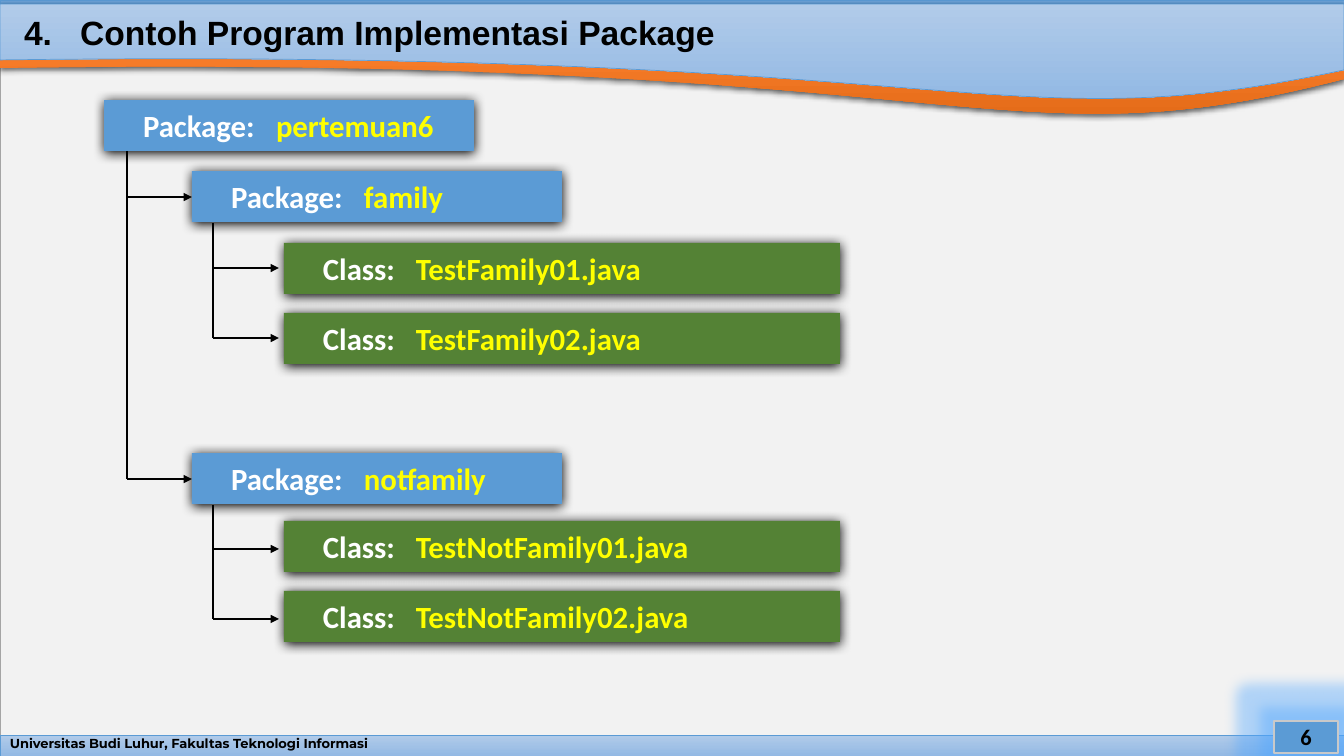
from lxml import etree
from pptx import Presentation
from pptx.dml.color import RGBColor
from pptx.enum.shapes import MSO_CONNECTOR, MSO_SHAPE
from pptx.enum.text import MSO_ANCHOR, MSO_AUTO_SIZE, PP_ALIGN
from pptx.oxml import parse_xml
from pptx.oxml.ns import nsdecls, qn
from pptx.util import Pt

EMU_PER_PX = 12192000 / 1344
BLUE, GREEN, BLACK, YELLOW = "5B9BD5", "548235", "000000", "FFFF00"
PALE_BLUES = ["B1CBE9", "93B9E4"]


def px(*lengths):
    """Turn px lengths into EMU."""
    return [round(length * EMU_PER_PX) for length in lengths]


def paint(shape, colours, line=None, line_width=0.5, effect=None):
    """Fill with one colour or a top-down gradient, set the outline and add an effect."""
    if len(colours) == 1:
        shape.fill.solid()
        shape.fill.fore_color.rgb = RGBColor.from_string(colours[0])
    else:
        shape.fill.gradient()
        shape.fill.gradient_angle = 270
        for stop, colour in zip(shape.fill.gradient_stops, colours):
            stop.color.rgb = RGBColor.from_string(colour)
    if line:
        shape.line.color.rgb = RGBColor.from_string(line)
        shape.line.width = Pt(line_width)
    else:
        shape.line.fill.background()
    shape.shadow.inherit = False
    if effect:
        tag, attributes, colour, alpha = effect
        shape.element.spPr.find(qn("a:effectLst")).append(parse_xml(
            f'<a:{tag} {nsdecls("a")} {attributes}><a:srgbClr val="{colour}">'
            f'<a:alpha val="{alpha}000"/></a:srgbClr></a:{tag}>'))


presentation = Presentation()
presentation.slide_width, presentation.slide_height = px(1344, 756)
slide = presentation.slides.add_slide(presentation.slide_layouts[5])
shapes = slide.shapes

# Backdrop and bands
for top, height, colours, line in [
    (4, 752, ["F2F2F2"], "A5A5A5"),
    (735, 21, PALE_BLUES, BLUE),
    (0, 11, ["71A6DB", "448ACA"], BLUE),
]:
    band = shapes.add_shape(MSO_SHAPE.RECTANGLE, *px(0, top, 1344, height))
    paint(band, colours, line)

# Header waves: each lower edge is a cubic curve
WAVE_SHADOW = ("outerShdw", 'blurRad="57150" dist="19050" dir="5400000" rotWithShape="0"', BLACK, 63)
for curve, colours, first_stop, line, effect in [
    ([(0, 68), (984, 53), (994, 169), (1344, 79)], ["F67B28", "E56C19"], 0.5, None, WAVE_SHADOW),
    ([(0, 60), (984, 47), (994, 145), (1344, 70)], PALE_BLUES, 0, BLUE, None),
]:
    points = []
    for step in range(61):
        t = step / 60
        weights = [(1 - t) ** 3, 3 * t * (1 - t) ** 2, 3 * t ** 2 * (1 - t), t ** 3]
        points.append(px(*(sum(w * point[axis] for w, point in zip(weights, curve))
                           for axis in (0, 1))))
    builder = shapes.build_freeform(*px(0, 4))
    builder.add_line_segments(points + [px(1344, 4)], close=True)
    wave = builder.convert_to_shape()
    paint(wave, colours, line, effect=effect)
    wave.fill.gradient_stops[0].position = first_stop

# Title, footer and page number
title = shapes.title
title.element.getparent().append(title.element)
title.left, title.top, title.width, title.height = px(14, 12, 1308, 46)
footer = shapes.add_textbox(*px(0, 735, 1344, 21))
page_number = shapes.add_shape(MSO_SHAPE.RECTANGLE, *px(1274, 721, 64, 32))
paint(page_number, [BLUE], "C9C9C9", 1.5, ("glow", 'rad="228600"', "4FA6FF", 40))

labels = [
    (title, [("4.\tContoh Program Implementasi Package", BLACK)], "Arial", 24, PP_ALIGN.LEFT, 0.9, 56),
    (footer, [("Universitas Budi Luhur, Fakultas Teknologi Informasi", BLACK)],
     "Montserrat", 9.3, PP_ALIGN.LEFT, 0.7, None),
    (page_number, [("6", BLACK)], "Calibri", 16, PP_ALIGN.CENTER, 1, None),
]

# Package tree boxes
BOX_SHADOW = ("outerShdw", 'blurRad="107950" dist="12700" dir="5400000" rotWithShape="0"', BLACK, 100)
KINDS = {"Package:": (370, BLUE, 133), "Class:": (556, GREEN, 93)}
for left, top, kind, name in [
    (104, 100, "Package:", "pertemuan6"),
    (192, 171, "Package:", "family"),
    (192, 453, "Package:", "notfamily"),
    (284, 243, "Class:", "TestFamily01.java"),
    (284, 313, "Class:", "TestFamily02.java"),
    (284, 521, "Class:", "TestNotFamily01.java"),
    (284, 591, "Class:", "TestNotFamily02.java"),
]:
    width, colour, tab = KINDS[kind]
    box = shapes.add_shape(MSO_SHAPE.RECTANGLE, *px(left, top, width, 51))
    paint(box, [colour], effect=BOX_SHADOW)
    box.text_frame.margin_left = px(39)[0]
    labels.append((box, [(kind + "\t", "FFFFFF"), (name, YELLOW)],
                   "Calibri", 22, PP_ALIGN.LEFT, 1, tab))

for shape, texts, font_name, size, alignment, spacing, tab in labels:
    frame = shape.text_frame
    frame.word_wrap = True
    frame.auto_size = MSO_AUTO_SIZE.NONE
    frame.vertical_anchor = MSO_ANCHOR.MIDDLE
    paragraph = frame.paragraphs[0]
    paragraph.alignment = alignment
    paragraph.line_spacing = spacing
    if tab:
        tab_list = etree.SubElement(paragraph._p.get_or_add_pPr(), qn("a:tabLst"))
        etree.SubElement(tab_list, qn("a:tab"), pos=str(px(tab)[0]), algn="l")
    for text, colour in texts:
        run = paragraph.add_run()
        run.text = text
        run.font.name = font_name
        run.font.size = Pt(size)
        run.font.bold = True
        run.font.color.rgb = RGBColor.from_string(colour)

# Trunks and branch arrows
lines = []
for trunk, top, branches, arrow_end in [
    (127, 151, (197, 479), 192),
    (213, 223, (268, 338), 279),
    (213, 505, (549, 619), 279),
]:
    lines.append((trunk, top, trunk, branches[-1], False))
    lines += [(trunk, y, arrow_end, y, True) for y in branches]
for *ends, has_arrow in lines:
    connector = shapes.add_connector(MSO_CONNECTOR.STRAIGHT, *px(*ends))
    connector.line.color.rgb = RGBColor.from_string(BLACK)
    connector.line.width = Pt(2)
    if has_arrow:
        etree.SubElement(connector.line._get_or_add_ln(), qn("a:tailEnd"), type="triangle")
    etree.SubElement(connector._element.spPr, qn("a:effectLst"))

presentation.save("out.pptx")
